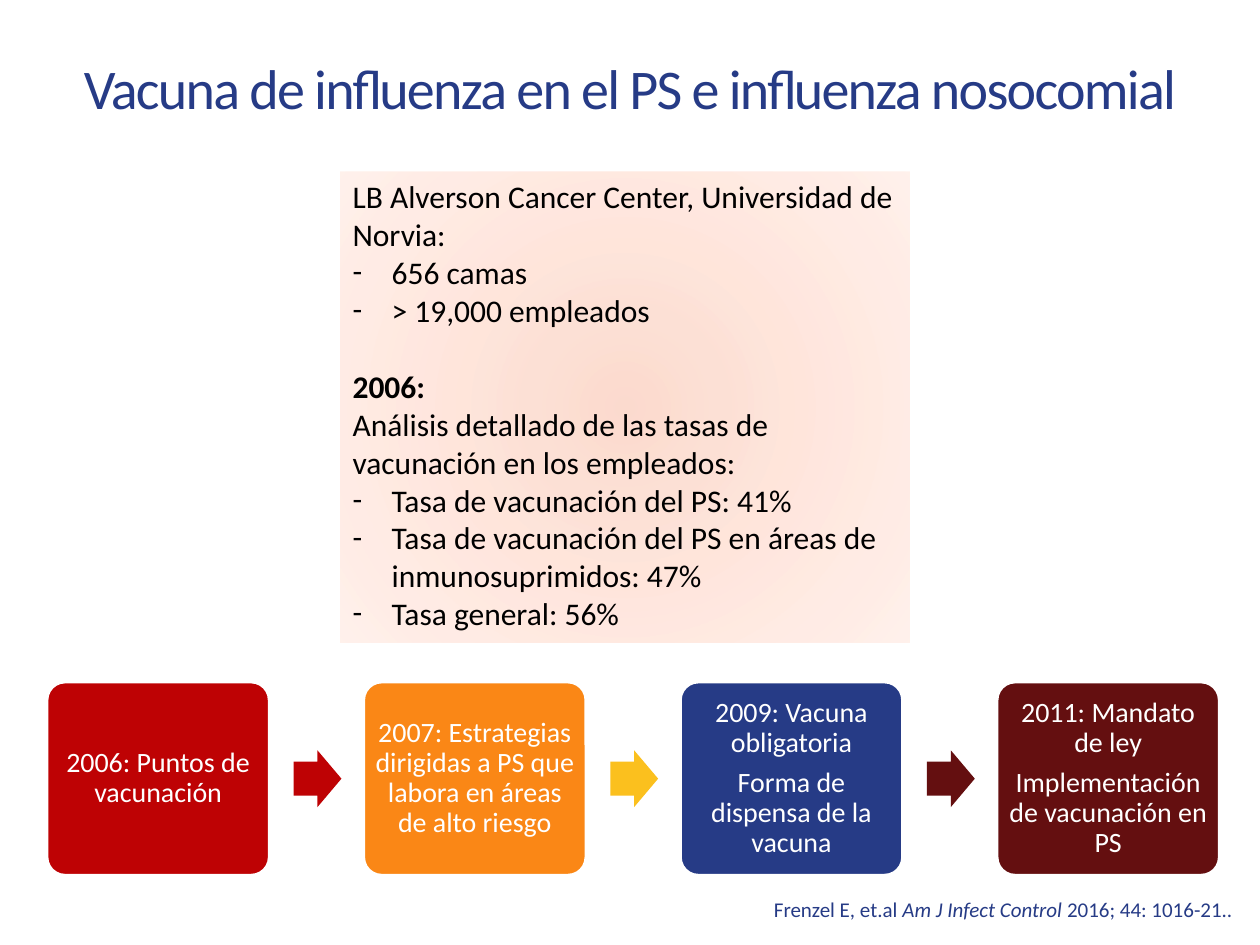
from dataclasses import dataclass
from typing import NamedTuple, Optional

from pptx import Presentation
from pptx.dml.color import RGBColor
from pptx.enum.shapes import MSO_SHAPE
from pptx.enum.text import MSO_ANCHOR, PP_ALIGN
from pptx.oxml import parse_xml
from pptx.oxml.ns import nsdecls
from pptx.util import Inches, Pt

SLIDE_W, SLIDE_H = 10, 7.5


@dataclass(frozen=True)
class Theme:
    font: str = "Calibri"
    navy: str = "263B86"
    red: str = "BE0204"
    orange: str = "FA8716"
    amber: str = "FBC01E"
    maroon: str = "640F10"
    white: str = "FFFFFF"
    black: str = "000000"
    # (position %, colour) from the centre outwards
    glow: tuple = ((0, "F8BCA5"), (45, "FFD0BE"), (100, "FFE5DC"))
    glow_opacity: int = 54
    title_size: int = 32
    body_size: int = 18
    step_size: int = 16
    source_size: int = 12


THEME = Theme()


class Box(NamedTuple):
    left: float
    top: float
    width: float
    height: float

    def lengths(self) -> list:
        return [Inches(value) for value in self]


class Line(NamedTuple):
    text: str
    bullet: bool = False
    bold: bool = False
    gap_before: float = 0


@dataclass(frozen=True)
class Step:
    paragraphs: tuple
    colour: str
    arrow_colour: Optional[str] = None


# Content
TITLE = "Vacuna de influenza en el PS e influenza nosocomial"
STUDY = [
    Line("LB Alverson Cancer Center, Universidad de Norvia:"),
    Line("656 camas", bullet=True),
    Line("> 19,000 empleados", bullet=True),
    Line("2006:", bold=True, gap_before=22),
    Line("Análisis detallado de las tasas de vacunación en los empleados:"),
    Line("Tasa de vacunación del PS: 41%", bullet=True),
    Line("Tasa de vacunación del PS en áreas de inmunosuprimidos: 47%", bullet=True),
    Line("Tasa general: 56%", bullet=True),
]
STEPS = [
    Step(("2006: Puntos de vacunación",), THEME.red, THEME.red),
    Step(("2007: Estrategias dirigidas a PS que labora en áreas de alto riesgo",),
         THEME.orange, THEME.amber),
    Step(("2009: Vacuna obligatoria", "Forma de dispensa de la vacuna"),
         THEME.navy, THEME.maroon),
    Step(("2011: Mandato de ley", "Implementación de vacunación en PS"), THEME.maroon),
]
SOURCE = [("Frenzel E, et.al ", False), ("Am J Infect Control ", True),
          ("2016; 44: 1016-21..", False)]

# Layout: four equal columns for the timeline
TITLE_BOX = Box(0.05 * SLIDE_W, 0.02 * SLIDE_H, 0.9 * SLIDE_W, 0.144 * SLIDE_H)
STUDY_BOX = Box(2.7, 1.36, 4.52, 3.74)
SOURCE_BOX = Box(3.56, 7.07, 6.32, 0.3)
FIRST_CARD = Box(0.36, 5.4, 1.79, 1.56)
COLUMN_PITCH = (7.9 - FIRST_CARD.left) / (len(STEPS) - 1)
ARROW_W, ARROW_H, ARROW_OFFSET = 0.38, 0.45, 1.97


def style_run(run, size: int, colour: str, bold: bool = False, italic: bool = False) -> None:
    run.font.name = THEME.font
    run.font.size = Pt(size)
    run.font.color.rgb = RGBColor.from_string(colour)
    run.font.bold = bold
    run.font.italic = italic


def add_text_box(slide, box: Box):
    frame = slide.shapes.add_textbox(*box.lengths()).text_frame
    frame.word_wrap = True
    return frame


def add_filled_shape(slide, preset, box: Box, colour: str):
    shape = slide.shapes.add_shape(preset, *box.lengths())
    shape.shadow.inherit = False
    shape.fill.solid()
    shape.fill.fore_color.rgb = RGBColor.from_string(colour)
    shape.line.fill.background()
    return shape


def apply_glow(shape) -> None:
    """Swap the solid fill for a translucent radial gradient."""
    stops = "".join(
        f'<a:gs pos="{place * 1000}"><a:srgbClr val="{colour}">'
        f'<a:alpha val="{THEME.glow_opacity * 1000}"/></a:srgbClr></a:gs>'
        for place, colour in THEME.glow)
    gradient = parse_xml(
        f'<a:gradFill {nsdecls("a")} rotWithShape="1"><a:gsLst>{stops}</a:gsLst>'
        '<a:path path="circle"><a:fillToRect l="50000" t="50000" r="50000" b="50000"/>'
        '</a:path></a:gradFill>')
    properties = shape.element.spPr
    solid = properties.find("{*}solidFill")
    properties.replace(solid, gradient)


def add_dash(paragraph) -> None:
    properties = paragraph._p.get_or_add_pPr()
    indent = Inches(0.31)
    properties.set("marL", str(indent))
    properties.set("indent", str(-indent))
    properties.append(parse_xml(f'<a:buFont {nsdecls("a")} typeface="{THEME.font}"/>'))
    properties.append(parse_xml(f'<a:buChar {nsdecls("a")} char="-"/>'))


def add_title(slide) -> None:
    frame = add_text_box(slide, TITLE_BOX)
    frame.vertical_anchor = MSO_ANCHOR.MIDDLE
    frame.text = TITLE
    paragraph = frame.paragraphs[0]
    paragraph.alignment = PP_ALIGN.CENTER
    style_run(paragraph.runs[0], THEME.title_size, THEME.navy)
    paragraph.runs[0].font._element.set("spc", "-100")


def add_study(slide) -> None:
    panel = add_filled_shape(slide, MSO_SHAPE.RECTANGLE, STUDY_BOX, THEME.white)
    apply_glow(panel)
    frame = panel.text_frame
    frame.word_wrap = True
    frame.vertical_anchor = MSO_ANCHOR.TOP
    frame.text = "\n".join(line.text for line in STUDY)
    for paragraph, line in zip(frame.paragraphs, STUDY):
        paragraph.alignment = PP_ALIGN.LEFT
        paragraph.space_before = Pt(line.gap_before)
        if line.bullet:
            add_dash(paragraph)
        style_run(paragraph.runs[0], THEME.body_size, THEME.black, bold=line.bold)


def add_step(slide, column: int, step: Step) -> None:
    left = FIRST_CARD.left + column * COLUMN_PITCH
    card = add_filled_shape(slide, MSO_SHAPE.ROUNDED_RECTANGLE,
                            FIRST_CARD._replace(left=left), step.colour)
    card.adjustments[0] = 0.1
    card.line.color.rgb = RGBColor.from_string(THEME.white)
    card.line.width = Pt(3.5)

    frame = card.text_frame
    frame.word_wrap = True
    frame.vertical_anchor = MSO_ANCHOR.MIDDLE
    frame.margin_left = frame.margin_right = Inches(0.06)
    frame.margin_top = frame.margin_bottom = Inches(0.06)
    frame.text = "\n".join(step.paragraphs)
    for paragraph in frame.paragraphs:
        paragraph.alignment = PP_ALIGN.CENTER
        paragraph.line_spacing = 0.9
        paragraph.space_after = Pt(0.35 * THEME.step_size)
        style_run(paragraph.runs[0], THEME.step_size, THEME.white)

    if step.arrow_colour:
        arrow_top = FIRST_CARD.top + (FIRST_CARD.height - ARROW_H) / 2
        arrow = add_filled_shape(
            slide, MSO_SHAPE.RIGHT_ARROW,
            Box(left + ARROW_OFFSET, arrow_top, ARROW_W, ARROW_H), step.arrow_colour)
        arrow.adjustments[0] = 0.6
        arrow.adjustments[1] = 0.5


def add_source(slide) -> None:
    paragraph = add_text_box(slide, SOURCE_BOX).paragraphs[0]
    paragraph.alignment = PP_ALIGN.RIGHT
    for text, italic in SOURCE:
        run = paragraph.add_run()
        run.text = text
        style_run(run, THEME.source_size, THEME.navy, italic=italic)


def main() -> None:
    deck = Presentation()
    deck.slide_width, deck.slide_height = Inches(SLIDE_W), Inches(SLIDE_H)
    slide = deck.slides.add_slide(deck.slide_layouts[6])
    add_title(slide)
    add_study(slide)
    for column, step in enumerate(STEPS):
        add_step(slide, column, step)
    add_source(slide)
    deck.save("out.pptx")


if __name__ == "__main__":
    main()
